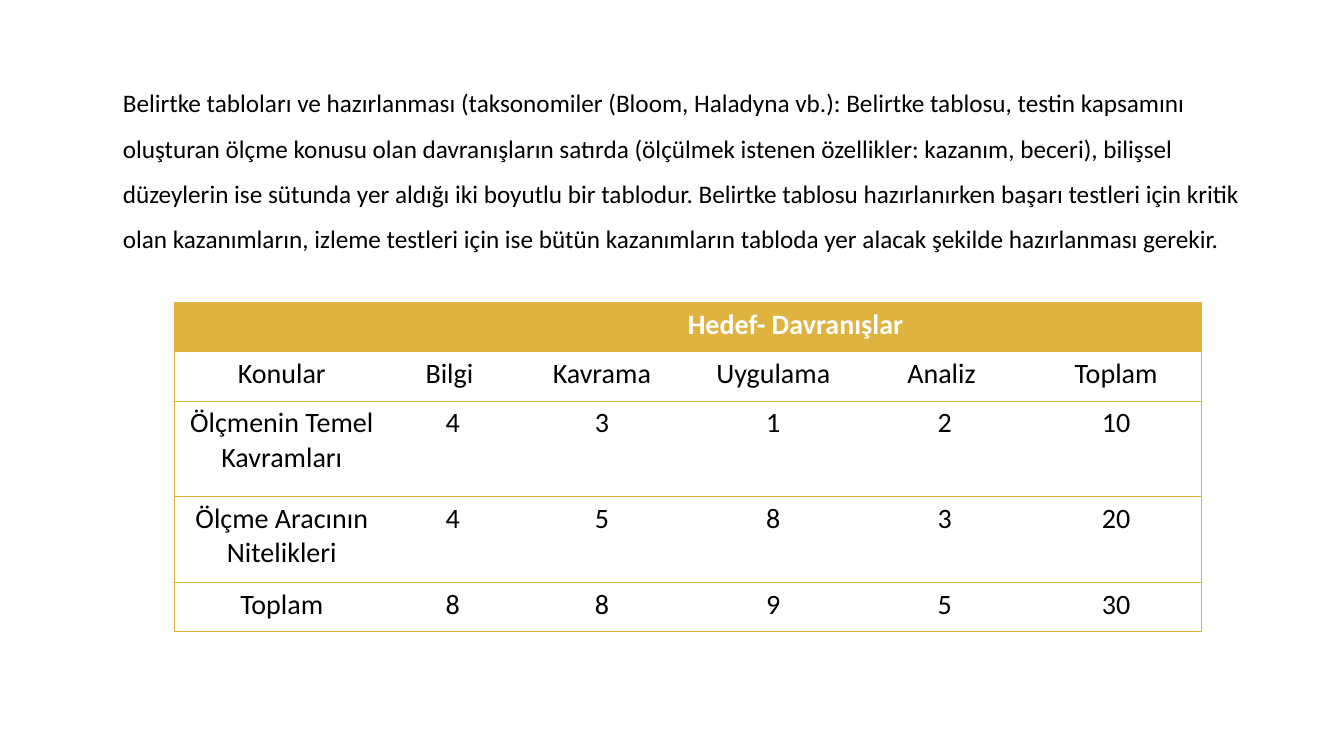
from dataclasses import dataclass

from lxml import etree
from pptx import Presentation
from pptx import util as u
from pptx.dml.color import RGBColor
from pptx.enum import text
from pptx.oxml.ns import qn

PX = 9144  # 100 px to the inch
COLORS = {"gold": "DEB340", "black": "000000", "white": "FFFFFF"}
FONT = "Calibri"


@dataclass(frozen=True)
class TableRow:
    height: int
    labels: tuple[str, ...]
    header: bool = False


INTRO = (
    "Belirtke tabloları ve hazırlanması (taksonomiler (Bloom, Haladyna vb.): "
    "Belirtke tablosu, testin kapsamını oluşturan ölçme konusu olan davranışların "
    "satırda (ölçülmek istenen özellikler: kazanım, beceri), bilişsel düzeylerin ise "
    "sütunda yer aldığı iki boyutlu bir tablodur. Belirtke tablosu hazırlanırken "
    "başarı testleri için kritik olan kazanımların, izleme testleri için ise bütün "
    "kazanımların tabloda yer alacak şekilde hazırlanması gerekir."
)
COLUMN_WIDTHS = (213, 126, 170, 170, 170, 170)
ROWS = (
    TableRow(49, ("", "Hedef- Davranışlar", "", "", "", ""), header=True),
    TableRow(49, ("Konular", "Bilgi ", "Kavrama", "Uygulama", "Analiz ", "Toplam")),
    TableRow(95, ("Ölçmenin Temel Kavramları", "4", "3", "1", "2", "10")),
    TableRow(85, ("Ölçme Aracının Nitelikleri", "4", "5", "8", "3", "20")),
    TableRow(49, ("Toplam", "8", "8", "9", "5", "30")),
)


def px(length: int) -> u.Emu:
    return u.Emu(length * PX)


def style_runs(paragraph, size: int, color: str, bold: bool = False) -> None:
    for run in paragraph.runs:
        run.font.name = FONT
        run.font.size = u.Pt(size)
        run.font.bold = bold
        run.font.color.rgb = RGBColor.from_string(COLORS[color])


def set_borders(cell, visible: str) -> None:
    """Draw the sides named in visible (L, R, T, B) and clear the others."""
    properties = cell._tc.get_or_add_tcPr()
    for position, side in enumerate("LRTB"):
        line = etree.Element(qn(f"a:ln{side}"), w=str(u.Pt(0.75)))
        if side in visible:
            fill = etree.SubElement(line, qn("a:solidFill"))
            etree.SubElement(fill, qn("a:srgbClr"), val=COLORS["gold"])
        else:
            etree.SubElement(line, qn("a:noFill"))
        properties.insert(position, line)


def add_intro(slide) -> None:
    intro = slide.shapes.add_textbox(px(112), px(67), px(1158), px(187)).text_frame
    intro.word_wrap = True
    intro.text = INTRO
    intro.paragraphs[0].line_spacing = 1.5
    style_runs(intro.paragraphs[0], 18, "black")


def fill_cell(cell, label: str, header: bool) -> None:
    if header:
        cell.fill.solid()
        cell.fill.fore_color.rgb = RGBColor.from_string(COLORS["gold"])
    else:
        cell.fill.background()
    paragraph = cell.text_frame.paragraphs[0]
    paragraph.text = label
    paragraph.alignment = text.PP_ALIGN.CENTER
    style_runs(paragraph, 20, "white" if header else "black", bold=header)


def add_specification_table(slide) -> None:
    last = len(COLUMN_WIDTHS) - 1
    table = slide.shapes.add_table(
        len(ROWS), len(COLUMN_WIDTHS), px(173), px(300),
        px(sum(COLUMN_WIDTHS)), px(sum(row.height for row in ROWS)),
    ).table
    table.horz_banding = False
    for column, width in zip(table.columns, COLUMN_WIDTHS):
        column.width = px(width)
    for r, row in enumerate(ROWS):
        table.rows[r].height = px(row.height)
        for c, label in enumerate(row.labels):
            cell = table.cell(r, c)
            fill_cell(cell, label, row.header)
            at_right = c == last or (row.header and c > 0)
            set_borders(cell, "TB" + "L" * (c == 0) + "R" * at_right)
    # The heading spans every column but the first
    table.cell(0, 1).merge(table.cell(0, last))


def main() -> None:
    deck = Presentation()
    deck.slide_width, deck.slide_height = px(1333), px(750)
    slide = deck.slides.add_slide(deck.slide_layouts[6])
    add_intro(slide)
    add_specification_table(slide)
    deck.save("out.pptx")


if __name__ == "__main__":
    main()
